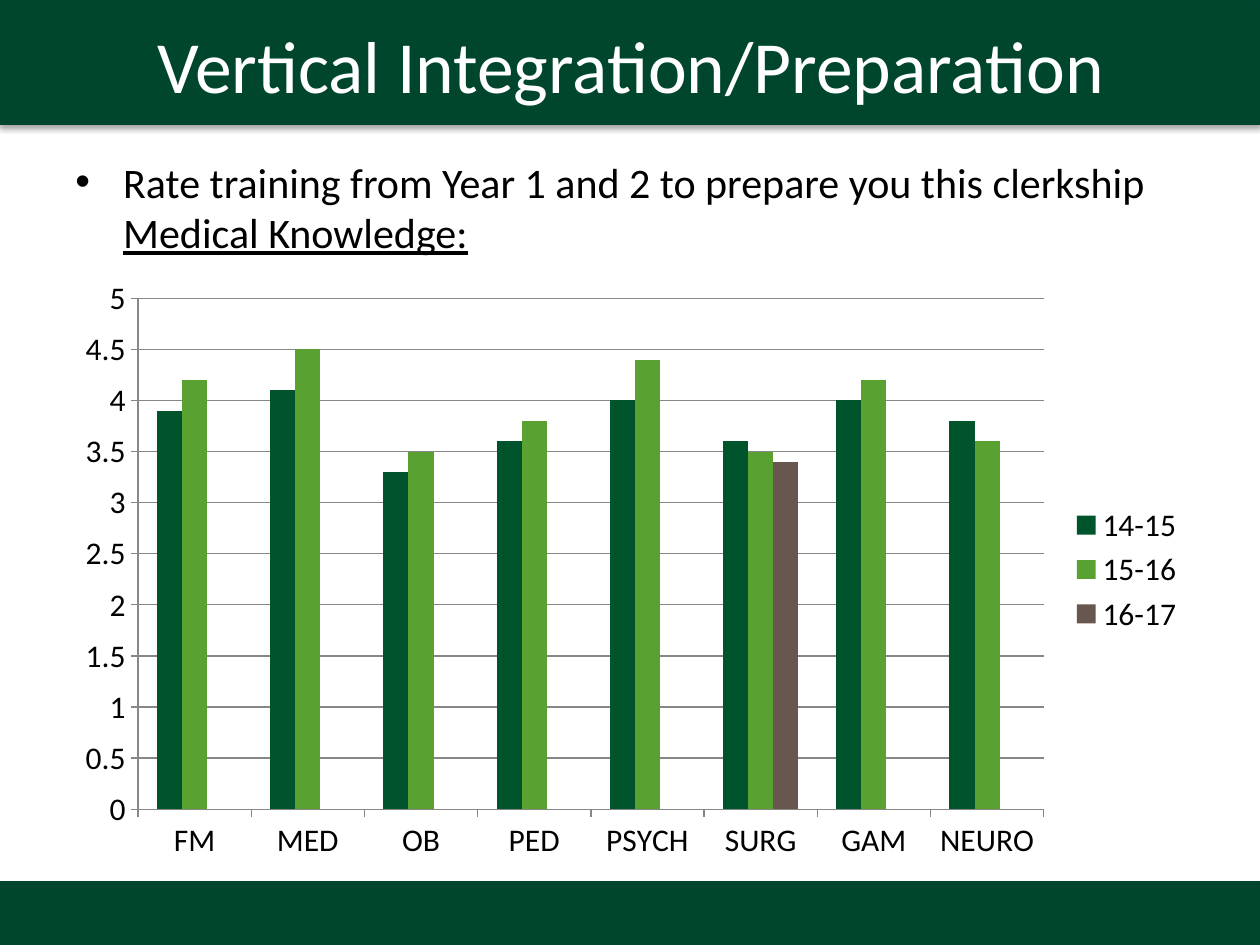
from lxml import etree
from pptx import Presentation
from pptx import util as u
from pptx.chart.data import CategoryChartData
from pptx.dml.color import RGBColor
from pptx.enum import chart as charts, shapes, text
from pptx.oxml import parse_xml
from pptx.oxml.ns import nsdecls, qn

COLORS = {
    "band": "00462D", "band line": "00442D", "title": "FFFFFF", "body": "000000",
    "grid": "878787", "14-15": "00542C", "15-16": "59A131", "16-17": "67574E",
}
FONT = "Calibri"


def style(font, size, color):
    font.name, font.size = FONT, u.Pt(size)
    font.color.rgb = RGBColor.from_string(COLORS[color])


prs = Presentation()
prs.slide_width, prs.slide_height = u.Inches(10), u.Inches(7.5)
slide = prs.slides.add_slide(prs.slide_layouts[6])
margin = u.Inches(0.5)
content_width = prs.slide_width - 2 * margin

# Header and footer bands
for top, height in ((0, 0.99), (7, 0.5)):
    band = slide.shapes.add_shape(shapes.MSO_SHAPE.RECTANGLE, 0, u.Inches(top),
                                  prs.slide_width, u.Inches(height))
    band.fill.solid()
    band.fill.fore_color.rgb = RGBColor.from_string(COLORS["band"])
    band.line.color.rgb = RGBColor.from_string(COLORS["band line"])
    band.line.width = u.Pt(0.75)
    band.shadow.inherit = False
    effects = band.element.spPr.find(qn("a:effectLst"))
    effects.append(parse_xml(
        f'<a:outerShdw {nsdecls("a")} blurRad="{u.Pt(3.1)}" dist="{u.Pt(1.8)}" dir="5400000" '
        'rotWithShape="0"><a:srgbClr val="000000"><a:alpha val="35000"/></a:srgbClr>'
        '</a:outerShdw>'))

# Title
title = slide.shapes.add_textbox(u.Inches(0.19), u.Inches(0.01),
                                 u.Inches(9.63), u.Inches(0.99)).text_frame
title.word_wrap = True
title.vertical_anchor = text.MSO_ANCHOR.MIDDLE
heading = title.paragraphs[0]
heading.alignment = text.PP_ALIGN.CENTER
run = heading.add_run()
run.text = "Vertical Integration/Preparation"
style(run.font, 42, "title")

# Survey question
body = slide.shapes.add_textbox(margin, u.Inches(1.19), content_width, u.Inches(0.93)).text_frame
body.word_wrap = True
question = body.paragraphs[0]
props = question._p.get_or_add_pPr()
props.set("marL", str(u.Inches(0.38)))
props.set("indent", str(-u.Inches(0.38)))
etree.SubElement(props, qn("a:buFont")).set("typeface", "Arial")
etree.SubElement(props, qn("a:buChar")).set("char", "•")
for words, underlined in (
        ("Rate training from Year 1 and 2 to prepare you this clerkship ", False),
        ("Medical Knowledge:", True)):
    run = question.add_run()
    run.text = words
    style(run.font, 24, "body")
    if underlined:
        run.font.underline = True

# Ratings by clerkship and year
ratings = CategoryChartData()
ratings.categories = ["FM", "MED", "OB", "PED", "PSYCH", "SURG", "GAM", "NEURO"]
ratings.add_series("14-15", [3.9, 4.1, 3.3, 3.6, 4, 3.6, 4, 3.8])
ratings.add_series("15-16", [4.2, 4.5, 3.5, 3.8, 4.4, 3.5, 4.2, 3.6])
ratings.add_series("16-17", [None] * 5 + [3.4] + [None] * 2)
chart = slide.shapes.add_chart(charts.XL_CHART_TYPE.COLUMN_CLUSTERED, margin, u.Inches(2.12),
                               content_width, u.Inches(4.8), ratings).chart
style(chart.font, 18, "body")
chart.has_title = False
chart.has_legend = True
chart.legend.position = charts.XL_LEGEND_POSITION.RIGHT
chart.legend.include_in_layout = False

plot = chart.plots[0]
plot.gap_width, plot.overlap = 150, 0
plot.vary_by_categories = False
for year in plot.series:
    year.format.fill.solid()
    year.format.fill.fore_color.rgb = RGBColor.from_string(COLORS[year.name])

scale = chart.value_axis
scale.minimum_scale, scale.maximum_scale, scale.major_unit = 0, 5, 0.5
scale.has_major_gridlines = True
for axis in (chart.category_axis, scale):
    axis.major_tick_mark = charts.XL_TICK_MARK.OUTSIDE
    axis.minor_tick_mark = charts.XL_TICK_MARK.NONE
for part in (chart.category_axis, scale, scale.major_gridlines):
    part.format.line.color.rgb = RGBColor.from_string(COLORS["grid"])
    part.format.line.width = u.Pt(0.75)

prs.save("out.pptx")
